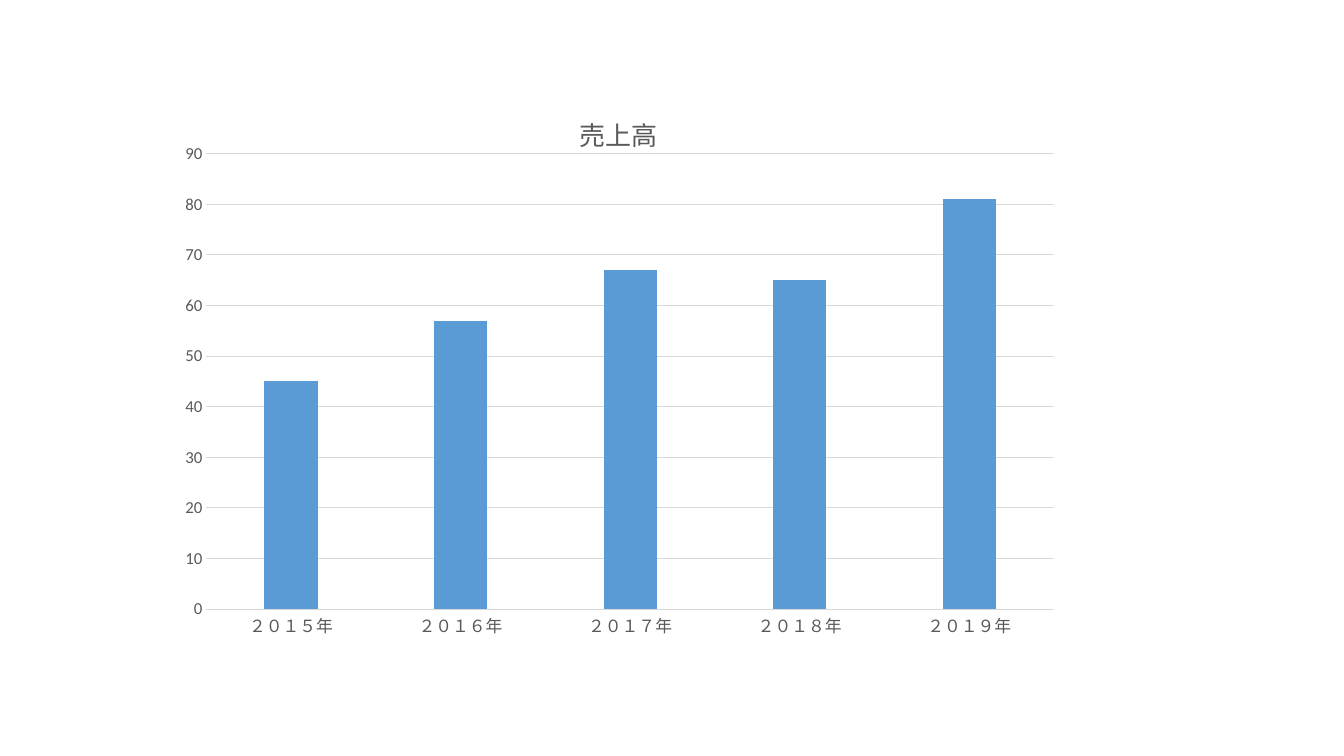
from lxml.etree import SubElement
from pptx import Presentation
from pptx.chart.data import CategoryChartData
from pptx.dml.color import RGBColor
from pptx.enum.chart import XL_CHART_TYPE as ChartType, XL_TICK_MARK as TickMark
from pptx.oxml.ns import qn
from pptx.util import Inches, Pt

BAR_BLUE = RGBColor(0x5B, 0x9B, 0xD5)
TEXT_GRAY = RGBColor(0x59, 0x59, 0x59)
GRID_GRAY = RGBColor(0xD9, 0xD9, 0xD9)
FONT = "Calibri"

SALES = {"２０１５年": 45, "２０１６年": 57, "２０１７年": 67, "２０１８年": 65, "２０１９年": 81}
TITLE = "売上高"
CHART_BOX = (1.69, 0.89, 8.89, 5.93)
PLOT_LAYOUT = {
    "layoutTarget": "inner", "xMode": "edge", "yMode": "edge",
    "x": 0.04, "y": 0.107, "w": 0.946, "h": 0.762,
}


def style_font(font, size):
    for name, value in {"name": FONT, "size": Pt(size), "bold": False}.items():
        setattr(font, name, value)
    font.color.rgb = TEXT_GRAY


def style_line(line):
    line.color.rgb = GRID_GRAY
    line.width = Pt(0.75)


def place_plot(chart):
    """Fix the inner plot area as fractions of the chart's box."""
    area = chart._chartSpace.chart.plotArea
    for old in area.findall(qn("c:layout")):
        area.remove(old)
    layout = SubElement(area, qn("c:layout"))
    area.insert(0, layout)
    manual = SubElement(layout, qn("c:manualLayout"))
    for name, value in PLOT_LAYOUT.items():
        SubElement(manual, qn(f"c:{name}")).set("val", str(value))


def style_axes(chart):
    for axis in (chart.category_axis, chart.value_axis):
        axis.major_tick_mark = axis.minor_tick_mark = TickMark.NONE
        style_font(axis.tick_labels.font, 12)
    style_line(chart.category_axis.format.line)

    values = chart.value_axis
    values.format.line.fill.background()
    values.has_major_gridlines = True
    style_line(values.major_gridlines.format.line)
    for name, value in {"minimum_scale": 0, "maximum_scale": 90, "major_unit": 10}.items():
        setattr(values, name, value)


def add_sales_chart(page, box):
    data = CategoryChartData()
    data.categories = list(SALES)
    data.add_series(TITLE, list(SALES.values()))
    chart = page.shapes.add_chart(
        ChartType.COLUMN_CLUSTERED, *map(Inches, box), data).chart
    chart.has_legend = False
    chart.font.name = FONT
    chart.font.size = Pt(10)

    chart.has_title = True
    title = chart.chart_title
    title.include_in_layout = False
    para = title.text_frame.paragraphs[0]
    span = para.add_run()
    span.text = TITLE
    for font in (para.font, span.font):
        style_font(font, 18.6)

    plot = chart.plots[0]
    for name, value in {"gap_width": 219, "overlap": -27, "vary_by_categories": False}.items():
        setattr(plot, name, value)
    fill = plot.series[0].format.fill
    fill.solid()
    fill.fore_color.rgb = BAR_BLUE

    style_axes(chart)
    place_plot(chart)


def main():
    deck = Presentation()
    deck.slide_width, deck.slide_height = Inches(13.33), Inches(7.5)
    page = deck.slides.add_slide(deck.slide_layouts[6])
    add_sales_chart(page, CHART_BOX)
    deck.save("out.pptx")


if __name__ == "__main__":
    main()
